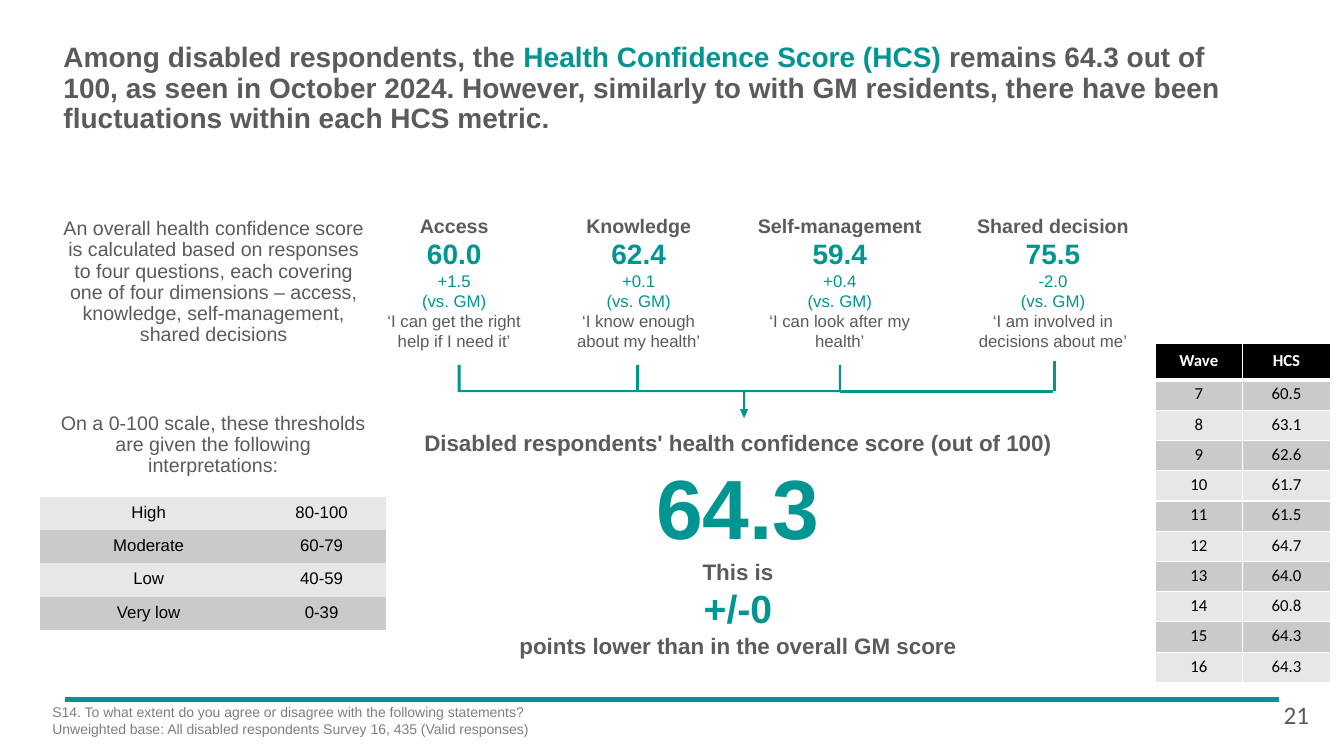
import lxml.etree
import pptx
import pptx.dml.color
import pptx.enum.shapes
import pptx.enum.text
import pptx.oxml.ns
import pptx.util

Inches = pptx.util.Inches
Pt = pptx.util.Pt
RGBColor = pptx.dml.color.RGBColor
CENTER = pptx.enum.text.PP_ALIGN.CENTER
LEFT = pptx.enum.text.PP_ALIGN.LEFT

TEAL = RGBColor(0x00, 0x95, 0x90)
GREY = RGBColor(0x5C, 0x5B, 0x5A)
NOTE = RGBColor(0x7E, 0x7E, 0x7E)
BLACK = RGBColor(0x00, 0x00, 0x00)
WHITE = RGBColor(0xFF, 0xFF, 0xFF)
PALE = RGBColor(0xE7, 0xE7, 0xE7)
MID = RGBColor(0xCA, 0xCA, 0xCA)
NO_STYLE = "{2D5ABB26-0587-4C30-8999-92F81FD0307C}"

THRESHOLDS = [("High", "80-100"), ("Moderate", "60-79"),
              ("Low", "40-59"), ("Very low", "0-39")]
METRICS = [
    ("Access", "60.0", "+1.5", "(vs. GM)", "‘I can get the right", "help if I need it’"),
    ("Knowledge", "62.4", "+0.1", "(vs. GM)", "‘I know enough", "about my health’"),
    ("Self-management", "59.4", "+0.4", "(vs. GM)", "‘I can look after my", "health’"),
    ("Shared decision", "75.5", "-2.0", "(vs. GM)", "‘I am involved in", "decisions about me’"),
]
METRIC_ROWS = [
    (0.23, 15.4, 14, GREY, True), (0.33, 22.7, 20, TEAL, True),
    (0.2, 13.5, 12, TEAL, False), (0.2, 13.4, 12, TEAL, False),
    (0.2, 13.4, 12, GREY, False), (0.19, 12.9, 12, GREY, False),
]
WAVES = [("7", "60.5"), ("8", "63.1"), ("9", "62.6"), ("10", "61.7"), ("11", "61.5"),
         ("12", "64.7"), ("13", "64.0"), ("14", "60.8"), ("15", "64.3"), ("16", "64.3")]


def apply(obj, values):
    """Set each attribute named in the dict."""
    for name, value in values.items():
        setattr(obj, name, value)


def write(p, runs, size, color, bold=False, font="Arial", **fmt):
    """Fill a paragraph with (text, colour) runs; a newline is a line break."""
    apply(p, fmt)
    for text, run_color in [(runs, color)] if isinstance(runs, str) else runs:
        for i, line in enumerate(text.split("\n")):
            if i:
                p.add_line_break()
            r = p.add_run()
            r.text = line
            apply(r.font, {"name": font, "size": Pt(size), "bold": bold})
            r.font.color.rgb = run_color


def add_text(slide, box, paragraphs, top=0.01):
    """Place a wrapped text box holding paragraphs given as write() arguments."""
    tf = slide.shapes.add_textbox(*map(Inches, box)).text_frame
    apply(tf, {"word_wrap": True, "margin_left": Inches(0.01), "margin_right": 0,
               "margin_top": Inches(top), "margin_bottom": 0})
    for i, paragraph in enumerate(paragraphs):
        write(tf.add_paragraph() if i else tf.paragraphs[0], **paragraph)


def add_grid(slide, x, y, cols, rows):
    """Add an unstyled table with the given column widths and row heights."""
    frame = slide.shapes.add_table(len(rows), len(cols), Inches(x), Inches(y),
                                   Inches(sum(cols)), Inches(sum(rows)))
    table = frame.table
    apply(table, {"first_row": False, "horz_banding": False})
    table._tbl.tblPr.find(pptx.oxml.ns.qn("a:tableStyleId")).text = NO_STYLE
    for col, width in zip(table.columns, cols):
        col.width = Inches(width)
    for row, height in zip(table.rows, rows):
        row.height = Inches(height)
    return table


def fill_cell(cell, text, fill=None, left=0, right=0, top=0, **fmt):
    """Write centred text in a cell and set its margins and fill."""
    apply(cell, {"margin_left": Inches(left), "margin_right": Inches(right),
                 "margin_top": Inches(top), "margin_bottom": 0})
    if fill is None:
        cell.fill.background()
    else:
        cell.fill.solid()
        cell.fill.fore_color.rgb = fill
    write(cell.text_frame.paragraphs[0], text, alignment=CENTER, **fmt)


def set_borders(cell, widths):
    """Give the cell white borders with widths in points by side."""
    qn = pptx.oxml.ns.qn
    tcPr = cell._tc.get_or_add_tcPr()
    for i, (side, width) in enumerate(widths.items()):
        ln = lxml.etree.Element(qn("a:ln" + side), w=str(Pt(width)))
        solid = lxml.etree.SubElement(ln, qn("a:solidFill"))
        lxml.etree.SubElement(solid, qn("a:srgbClr"), val=str(WHITE))
        tcPr.insert(i, ln)


def add_rule(slide, x, y, w, h, width):
    """Draw a straight teal line across the box."""
    sp = slide.shapes.add_connector(pptx.enum.shapes.MSO_CONNECTOR.STRAIGHT,
                                    *map(Inches, (x, y, x + w, y + h)))
    sp.line.color.rgb = TEAL
    sp.line.width = Pt(width)
    lxml.etree.SubElement(sp._element.spPr, pptx.oxml.ns.qn("a:effectLst"))


def add_title(slide, x, y, w, h):
    """Place the headline."""
    runs = [("Among disabled respondents, the ", GREY),
            ("Health Confidence Score (HCS) ", TEAL),
            ("remains 64.3 out of\n100, as seen in October 2024. However, similarly to "
             "with GM residents, there have been\nfluctuations within each HCS metric.", GREY)]
    add_text(slide, (x, y, w, h), [dict(runs=runs, size=20, color=GREY, bold=True,
                                        line_spacing=Pt(21.6))], 0.05)


def add_explanation(slide, x, y, w):
    """Place the score explanation and the threshold table."""
    note = dict(size=14, color=GREY, alignment=CENTER)
    intro = ("An overall health confidence score\nis calculated based on responses\n"
             "to four questions, each covering\none of four dimensions – access,\n"
             "knowledge, self-management,\nshared decisions")
    scale = "On a 0-100 scale, these thresholds\nare given the following\ninterpretations:"
    add_text(slide, (x + 0.16, y, 3.11, 1.31), [dict(runs=intro, line_spacing=0.9, **note)], 0.04)
    add_text(slide, (x + 0.19, y + 1.93, 3.04, 0.68),
             [dict(runs=scale, line_spacing=Pt(15.1), **note)], 0.04)
    table = add_grid(slide, x, y + 2.8, (1.98, w - 1.98), [0.33] * len(THRESHOLDS))
    for i, row in enumerate(THRESHOLDS):
        for j, text in enumerate(row):
            fill_cell(table.cell(i, j), text, (PALE, MID)[i % 2], left=0.17, top=0.06,
                      size=12, color=BLACK)


def add_metrics(slide, x, y):
    """Place the four metric columns and the bracket that joins them."""
    table = add_grid(slide, x, y, (1.63, 1.79, 2.19, 1.81), [row[0] for row in METRIC_ROWS])
    margins = [(0, 0.24), (0, 0), (0.01, 0), (0.24, 0)]
    for j, (metric, (left, right)) in enumerate(zip(METRICS, margins)):
        for i, (text, (_, leading, size, color, bold)) in enumerate(zip(metric, METRIC_ROWS)):
            fill_cell(table.cell(i, j), text, left=left, right=right, size=size,
                      color=color, bold=bold, line_spacing=Pt(leading))
    outline = [(3.8, 0), (3.78, 0), (3.78, 0.25), (1.8, 0.25), (1.8, 0), (1.77, 0),
               (1.77, 0.25), (0.03, 0.25), (0.03, 0), (0, 0), (0, 0.27), (2.83, 0.27),
               (2.83, 0.44), (2.8, 0.44), (2.84, 0.53), (2.88, 0.44), (2.85, 0.44),
               (2.85, 0.27), (3.8, 0.27)]
    points = [(Inches(x + 0.73 + dx), Inches(y + 1.48 + dy)) for dx, dy in outline]
    builder = slide.shapes.build_freeform(*points[0])
    builder.add_line_segments(points[1:], close=True)
    sp = builder.convert_to_shape()
    sp.shadow.inherit = False
    sp.fill.solid()
    sp.fill.fore_color.rgb = TEAL
    sp.line.fill.background()
    add_rule(slide, x + 6.65, y + 1.44, 0, 0.3, 1.75)
    add_rule(slide, x + 4.52, y + 1.74, 2.11, 0, 2.25)


def add_score(slide, x, y, w, h):
    """Place the overall score and its comparison."""
    lines = [("Disabled respondents' health confidence score (out of 100)", 16, GREY, Pt(18.6), 0),
             ("64.3", 60, TEAL, Pt(71.3), 0), ("This is", 16, GREY, Pt(19), 1.3),
             ("+/-0", 28, TEAL, Pt(33.4), 0),
             ("points lower than in the overall GM score", 16, GREY, 1.0, 0.3)]
    add_text(slide, (x, y, w, h),
             [dict(runs=text, size=size, color=color, bold=True, alignment=CENTER,
                   line_spacing=leading, space_before=Pt(before))
              for text, size, color, leading, before in lines])


def add_waves(slide, x, y):
    """Place the table of scores by wave."""
    table = add_grid(slide, x, y, (0.86, 0.88), [0.36] + [0.3] * len(WAVES))
    for i, row in enumerate([("Wave", "HCS")] + WAVES):
        head = i == 0
        fill = BLACK if head else (PALE, MID)[i % 2]
        for j, text in enumerate(row):
            cell = table.cell(i, j)
            fill_cell(cell, text, fill, top=0.07 if head else 0.04, size=12,
                      color=WHITE if head else BLACK, bold=head, font="Calibri")
            set_borders(cell, {"L": 1, "R": 1, "T": 3 if i == 1 else 1, "B": 3 if head else 1})


def add_footer(slide, x, y, w):
    """Place the rule, the source note and the page number."""
    add_rule(slide, x, y, w, 0, 3)
    notes = ["S14. To what extent do you agree or disagree with the following statements?",
             "Unweighted base: All disabled respondents Survey 16, 435 (Valid responses)"]
    add_text(slide, (x - 0.13, y + 0.03, 4.95, 0.36),
             [dict(runs=text, size=10, color=NOTE, alignment=LEFT) for text in notes])
    add_text(slide, (x + w + 0.03, y - 0.01, 0.28, 0.33),
             [dict(runs="21", size=18, color=GREY, font="Calibri")])


def main():
    """Build the slide and save it."""
    prs = pptx.Presentation()
    apply(prs, {"slide_width": Inches(13.33), "slide_height": Inches(7.5)})
    slide = prs.slides.add_slide(prs.slide_layouts[6])
    add_title(slide, 0.62, 0.38, 11.94, 0.96)
    add_explanation(slide, 0.4, 2.13, 3.43)
    add_metrics(slide, 3.81, 2.14)
    add_score(slide, 4.18, 4.26, 6.27, 2.29)
    add_waves(slide, 11.46, 3.41)
    add_footer(slide, 0.64, 6.94, 12.05)
    prs.save("out.pptx")


if __name__ == "__main__":
    main()
